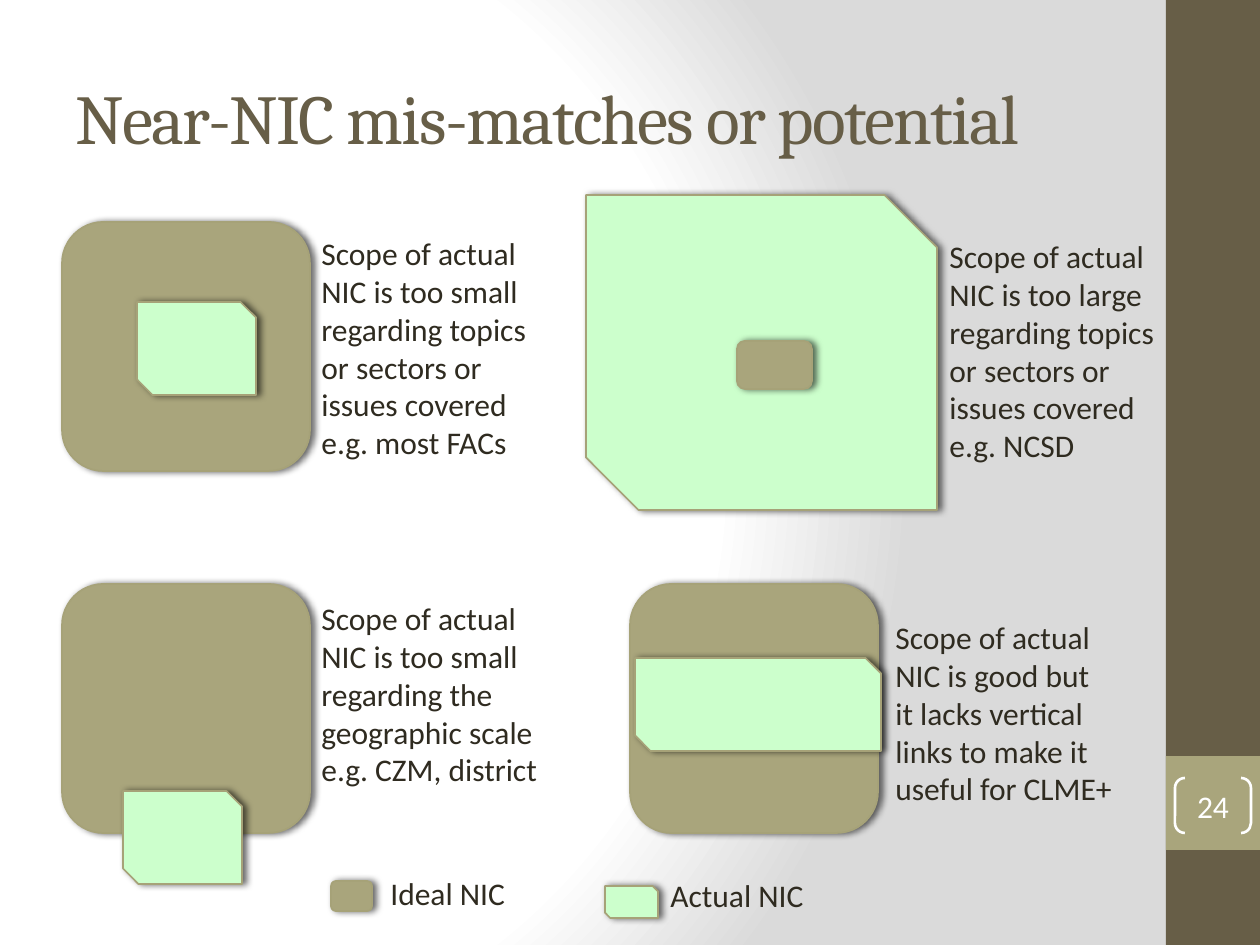
"""Build the slide on mismatches between ideal and actual NICs."""
from lxml.etree import SubElement
from pptx import Presentation
from pptx.dml.color import RGBColor
from pptx.enum.shapes import MSO_SHAPE
from pptx.enum.text import MSO_ANCHOR, PP_ALIGN
from pptx.oxml import parse_xml
from pptx.oxml.ns import nsdecls, qn
from pptx.util import Emu, Pt

EMU_PER_PX = 914400 / 126
BROWN = RGBColor(0x67, 0x5E, 0x47)
KHAKI = RGBColor(0xA9, 0xA5, 0x7C)
OUTLINE = RGBColor(0xA6, 0xA2, 0x78)
GREEN = RGBColor(0xCC, 0xFF, 0xCC)
INK = RGBColor(0x2F, 0x2B, 0x20)
WHITE = RGBColor(0xFF, 0xFF, 0xFF)
GRAY = RGBColor(0xDA, 0xDA, 0xDA)


def px(length):
    return Emu(round(length * EMU_PER_PX))


def write(frame, text, size=18, font="Calibri", color=INK,
          align=PP_ALIGN.LEFT, anchor=MSO_ANCHOR.TOP, wrap=True, spacing=0):
    frame.word_wrap = wrap
    frame.vertical_anchor = anchor
    frame.text = text
    for paragraph in frame.paragraphs:
        paragraph.alignment = align
        for run in paragraph.runs:
            run.font.size = Pt(size)
            run.font.name = font
            run.font.color.rgb = color
            if spacing:
                run.font._element.set("spc", str(spacing * 100))


class SlideBuilder:
    def __init__(self, presentation):
        self.slide = presentation.slides.add_slide(presentation.slide_layouts[6])

    def background(self):
        self.slide.background.fill.solid()
        properties = self.slide.element.find(".//" + qn("p:bgPr"))
        stops = "".join(
            f'<a:gs pos="{position * 1000}"><a:srgbClr val="{color}"/></a:gs>'
            for position, color in ((0, WHITE), (75, WHITE), (100, GRAY)))
        gradient = parse_xml(
            f'<a:gradFill {nsdecls("a")} rotWithShape="1"><a:gsLst>{stops}</a:gsLst>'
            '<a:path path="circle"><a:fillToRect l="20000" t="50000" r="100000" '
            'b="50000"/></a:path></a:gradFill>')
        properties.replace(properties[0], gradient)

    def shape(self, kind, box, fill=None, line=None, width=1):
        shape = self.slide.shapes.add_shape(kind, *map(px, box))
        shape.shadow.inherit = False
        if fill is None:
            shape.fill.background()
        else:
            shape.fill.solid()
            shape.fill.fore_color.rgb = fill
        if line is None:
            shape.line.fill.background()
        else:
            shape.line.color.rgb = line
            shape.line.width = Pt(width)
        return shape

    def shadowed(self, kind, box, fill):
        shape = self.shape(kind, box, fill, OUTLINE)
        effects = shape._element.spPr.find(qn("a:effectLst"))
        shadow = SubElement(effects, qn("a:outerShdw"), blurRad=str(Pt(4)),
                            dist=str(Pt(2)), dir="0", rotWithShape="0")
        color = SubElement(shadow, qn("a:srgbClr"), val="000000")
        SubElement(color, qn("a:alpha"), val="60000")

    def ideal(self, *box):
        self.shadowed(MSO_SHAPE.ROUNDED_RECTANGLE, box, KHAKI)

    def actual(self, *box):
        self.shadowed(MSO_SHAPE.SNIP_2_DIAG_RECTANGLE, box, GREEN)

    def text(self, text, *box, **style):
        box_shape = self.slide.shapes.add_textbox(*map(px, box))
        write(box_shape.text_frame, text, **style)

    def page_number(self, number, *box):
        bracket = self.shape(MSO_SHAPE.DOUBLE_BRACKET, box, line=WHITE, width=1.5)
        bracket.adjustments[0] = 0.18
        frame = bracket.text_frame
        frame.margin_left = frame.margin_right = 0
        frame.margin_top = frame.margin_bottom = 0
        write(frame, number, color=WHITE, align=PP_ALIGN.CENTER,
              anchor=MSO_ANCHOR.MIDDLE)


def main():
    presentation = Presentation()
    presentation.slide_width, presentation.slide_height = px(1260), px(945)
    builder = SlideBuilder(presentation)
    builder.background()
    builder.shape(MSO_SHAPE.RECTANGLE, (1166, 0, 94, 945), BROWN)
    builder.shape(MSO_SHAPE.RECTANGLE, (1166, 756, 94, 94), KHAKI)
    builder.page_number("24", 1175, 778, 76, 55)
    builder.text("Near-NIC mis-matches or potential", 63, 38, 1050, 158, size=40,
                 font="Cambria", color=BROWN, anchor=MSO_ANCHOR.MIDDLE, spacing=-1)

    builder.actual(586, 195, 351, 315)
    for left, top in ((62, 222), (630, 584), (62, 584)):
        builder.ideal(left, top, 248, 249)
    builder.ideal(737, 341, 75, 48)
    for left, top, width in ((137, 302, 119), (123, 791, 119), (635, 658, 246)):
        builder.actual(left, top, width, 93)

    too_small = "Scope of actual NIC is too small"
    captions = (
        (f"{too_small}\nregarding topics or sectors or issues covered "
         "e.g. most FACs", 309, 228, 242),
        ("Scope of actual NIC is too large\nregarding topics or sectors or "
         "issues covered e.g. NCSD", 937, 231, 242),
        (f"{too_small}\nregarding the geographic scale e.g. CZM, district",
         309, 593, 204),
        ("Scope of actual NIC is good but it lacks vertical links to make it "
         "useful for CLME+", 883, 612, 204),
    )
    for caption, left, top, height in captions:
        builder.text(caption, left, top, 243, height)

    builder.ideal(331, 881, 41, 30)
    builder.text("Ideal NIC", 378, 868, 142, 50, wrap=False)
    builder.actual(605, 886, 53, 32)
    builder.text("Actual NIC", 658, 870, 160, 50, wrap=False)
    presentation.save("out.pptx")


if __name__ == "__main__":
    main()
